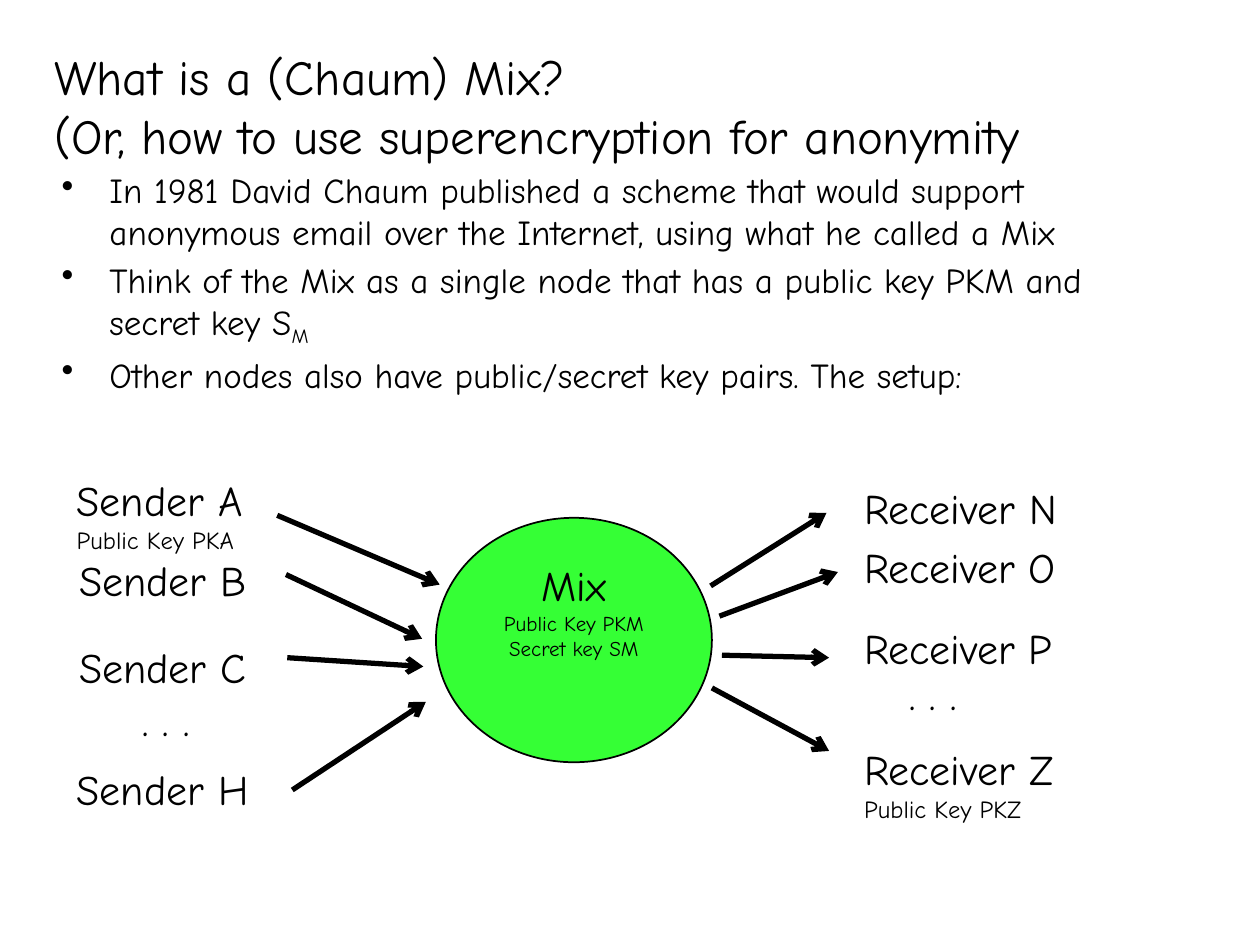
"""Build a slide explaining a Chaum mix with its senders and receivers."""
import dataclasses
import typing

import pptx
import pptx.dml.color
import pptx.enum.shapes
import pptx.enum.text
import pptx.oxml
import pptx.oxml.ns
import pptx.util

EMU_PER_PX = 9144
ANCHOR = pptx.enum.text.MSO_ANCHOR
ALIGN = pptx.enum.text.PP_ALIGN


@dataclasses.dataclass(frozen=True)
class Theme:
    """Colours, typeface and type sizes of the slide."""
    font: str = "Comic Neue"
    ink: str = "000000"
    mix_fill: str = "35FF35"
    title: int = 28
    body: int = 20
    node: int = 24
    key: int = 14
    mix_key: int = 12


class Box(typing.NamedTuple):
    """A rectangle in px."""
    left: int
    top: int
    width: int
    height: int


class Node(typing.NamedTuple):
    """A label for a sender, a receiver or an ellipsis."""
    box: Box
    name: str
    key: str = ""


class Arrow(typing.NamedTuple):
    """A message path between two points in px."""
    begin_x: int
    begin_y: int
    end_x: int
    end_y: int


THEME = Theme()
TITLE = "What is a (Chaum) Mix?\v(Or, how to use superencryption for anonymity"
TITLE_BOX = Box(33, 50, 942, 68)
BODY_BOX = Box(39, 129, 871, 224)
MIX_BOX = Box(346, 411, 219, 194)
BULLETS = [
    ("In 1981 David Chaum published a scheme that would support anonymous "
     "email over the Internet, using what he called a Mix", ""),
    ("Think of the Mix as a single node that has a public key PKM and secret key S", "M"),
    ("Other nodes also have public/secret key pairs. The setup:", ""),
]
NODES = [
    Node(Box(51, 372, 169, 74), "Sender A", "Public Key PKA"),
    Node(Box(53, 435, 165, 50), "Sender B"),
    Node(Box(53, 504, 164, 50), "Sender C"),
    Node(Box(103, 546, 65, 50), ". . ."),
    Node(Box(51, 601, 170, 50), "Sender H"),
    Node(Box(676, 378, 219, 50), "Receiver N"),
    Node(Box(676, 425, 193, 50), "Receiver O"),
    Node(Box(676, 489, 184, 50), "Receiver P"),
    Node(Box(712, 526, 65, 50), ". . ."),
    Node(Box(676, 585, 189, 74), "Receiver Z", "Public Key PKZ"),
]
ARROWS = [
    Arrow(220, 409, 349, 464),
    Arrow(227, 456, 335, 507),
    Arrow(228, 522, 336, 529),
    Arrow(232, 627, 338, 557),
    Arrow(564, 465, 656, 407),
    Arrow(571, 489, 665, 454),
    Arrow(573, 520, 658, 522),
    Arrow(565, 546, 658, 596),
]


def px(length: int) -> pptx.util.Emu:
    """Turn px into EMU."""
    return pptx.util.Emu(length * EMU_PER_PX)


def rgb(color: str) -> pptx.dml.color.RGBColor:
    """Turn a hex string into a colour."""
    return pptx.dml.color.RGBColor.from_string(color)


def apply(target: typing.Any, values: dict[str, typing.Any]) -> None:
    """Set each named attribute on the target."""
    for name, value in values.items():
        setattr(target, name, value)


def prepare_frame(shape: typing.Any, anchor: typing.Any = ANCHOR.TOP) -> typing.Any:
    """Set wrapping, anchor and margins, and return the text frame."""
    apply(shape.text_frame, {
        "word_wrap": True,
        "auto_size": pptx.enum.text.MSO_AUTO_SIZE.NONE,
        "vertical_anchor": anchor,
        "margin_left": px(10), "margin_right": px(10),
        "margin_top": px(5), "margin_bottom": px(5),
    })
    return shape.text_frame


def style_font(font: typing.Any, size: int) -> None:
    """Give a font the theme's typeface and colour."""
    apply(font, {"name": THEME.font, "size": pptx.util.Pt(size)})
    font.color.rgb = rgb(THEME.ink)


def write_lines(frame: typing.Any, lines: list[tuple[str, int]],
                alignment: typing.Any = ALIGN.LEFT) -> None:
    """Write one paragraph for each text and size."""
    for index, (text, size) in enumerate(lines):
        paragraph = frame.add_paragraph() if index else frame.paragraphs[0]
        apply(paragraph, {"text": text, "alignment": alignment})
        for run in paragraph.runs:
            style_font(run.font, size)


def add_title(slide: typing.Any) -> None:
    """Place and fill the title placeholder."""
    title = slide.shapes.title
    apply(title, {name: px(value) for name, value in TITLE_BOX._asdict().items()})
    write_lines(prepare_frame(title, ANCHOR.MIDDLE), [(TITLE, THEME.title)])


def add_bullets(slide: typing.Any) -> None:
    """Add the bulleted text with its subscript."""
    frame = prepare_frame(slide.shapes.add_textbox(*map(px, BODY_BOX)))
    write_lines(frame, [(text, THEME.body) for text, _ in BULLETS])
    for paragraph, (_, subscript) in zip(frame.paragraphs, BULLETS):
        paragraph.space_before = pptx.util.Pt(3)
        properties = paragraph._p.get_or_add_pPr()
        properties.set("marL", str(px(38)))
        properties.set("indent", str(-px(38)))
        bullet = pptx.oxml.parse_xml(
            f'<a:buChar {pptx.oxml.ns.nsdecls("a")} char="•"/>')
        properties.append(bullet)
        if subscript:
            run = paragraph.add_run()
            run.text = subscript
            style_font(run.font, THEME.body)
            run.font._element.set("baseline", "-25000")


def add_mix(slide: typing.Any) -> None:
    """Add the mix ellipse."""
    mix = slide.shapes.add_shape(pptx.enum.shapes.MSO_SHAPE.OVAL, *map(px, MIX_BOX))
    mix.shadow.inherit = False
    mix.fill.solid()
    mix.fill.fore_color.rgb = rgb(THEME.mix_fill)
    mix.line.color.rgb = rgb(THEME.ink)
    mix.line.width = pptx.util.Pt(1)
    lines = [("Mix", THEME.node), ("Public Key PKM Secret key SM", THEME.mix_key)]
    write_lines(prepare_frame(mix), lines, ALIGN.CENTER)


def add_node(slide: typing.Any, node: Node) -> None:
    """Add a node label, with its public key if it has one."""
    frame = prepare_frame(slide.shapes.add_textbox(*map(px, node.box)))
    keys = [(node.key, THEME.key)] if node.key else []
    write_lines(frame, [(node.name, THEME.node), *keys])


def add_arrow(slide: typing.Any, arrow: Arrow) -> None:
    """Add a straight line with an open arrowhead at its end."""
    connector = slide.shapes.add_connector(
        pptx.enum.shapes.MSO_CONNECTOR.STRAIGHT, *map(px, arrow))
    connector.line.color.rgb = rgb(THEME.ink)
    connector.line.width = pptx.util.Pt(3)
    namespace = pptx.oxml.ns.nsdecls("a")
    connector.line._get_or_add_ln().append(
        pptx.oxml.parse_xml(f'<a:tailEnd {namespace} type="arrow"/>'))
    connector._element.spPr.append(pptx.oxml.parse_xml(f"<a:effectLst {namespace}/>"))


def main() -> None:
    """Build and save the presentation."""
    presentation = pptx.Presentation()
    apply(presentation, {"slide_width": px(1000), "slide_height": px(750)})
    slide = presentation.slides.add_slide(presentation.slide_layouts[5])
    add_title(slide)
    add_bullets(slide)
    add_mix(slide)
    for node in NODES:
        add_node(slide, node)
    for arrow in ARROWS:
        add_arrow(slide, arrow)
    presentation.save("out.pptx")


if __name__ == "__main__":
    main()
